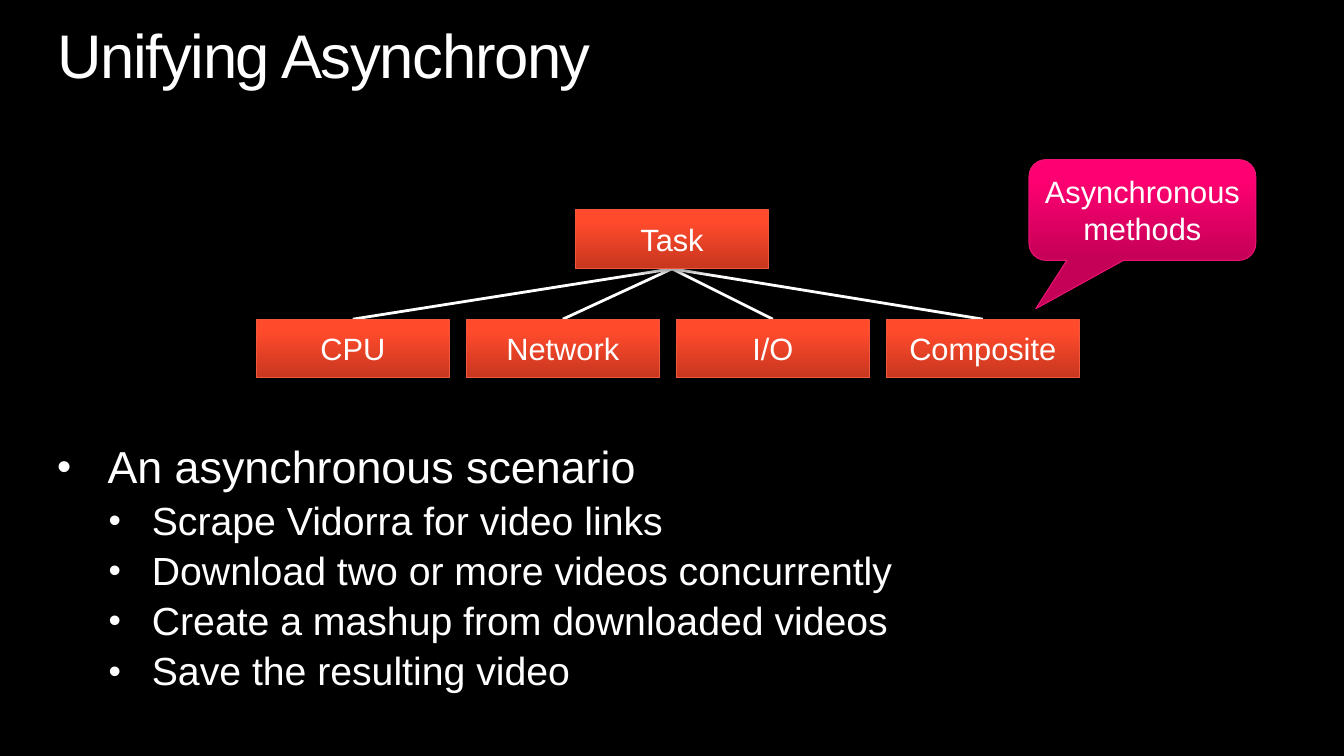
import copy
import lxml.etree
import pptx
import pptx.dml.color
import pptx.enum.shapes
import pptx.enum.text
import pptx.oxml
import pptx.oxml.ns
import pptx.util

SHAPE = pptx.enum.shapes.MSO_SHAPE
ALIGN = pptx.enum.text.PP_ALIGN
ANCHOR = pptx.enum.text.MSO_ANCHOR
qn = pptx.oxml.ns.qn
RED = ("C7371F", "FF4A2C", "FF4B2E"), "F0573E"
PINK = ("C40057", "FE0071", "FF0071"), "ED1374"
SHADE = (
    f'<a:outerShdw {pptx.oxml.ns.nsdecls("a")} blurRad="40000" dist="23000" dir="5400000" rotWithShape="0">'
    '<a:srgbClr val="000000"><a:alpha val="35000"/></a:srgbClr></a:outerShdw>'
)


def color(code):
    return pptx.dml.color.RGBColor.from_string(code)


class Board:
    """Draws on one slide, on a grid of 160 columns by 90 rows, in one style."""

    face = "Arial"
    ink = "FFFFFF"

    def __init__(self, deck):
        self.col = deck.slide_width / 160
        self.row = deck.slide_height / 90
        self.slide = deck.slides.add_slide(deck.slide_layouts[6])
        self.slide.background.fill.solid()
        self.slide.background.fill.fore_color.rgb = color("000000")

    def place(self, x, y, w, h):
        return [round(n) for n in (x * self.col, y * self.row, w * self.col, h * self.row)]

    def style(self, para, size):
        for run in para.runs:
            run.font.name = self.face
            run.font.size = pptx.util.Pt(size)
            run.font.color.rgb = color(self.ink)

    def text(self, x, y, w, h, lines):
        frame = self.slide.shapes.add_textbox(*self.place(x, y, w, h)).text_frame
        frame.word_wrap = True
        frame.margin_left = frame.margin_right = 0
        frame.margin_top = frame.margin_bottom = 0
        frame.text = "\n".join(lines)
        for para in frame.paragraphs:
            para.line_spacing = 0.9
        return frame.paragraphs

    def title(self, x, y, w, h, words):
        para = self.text(x, y, w, h, [words])[0]
        self.style(para, 44)
        para.runs[0].font._element.set("spc", "-100")

    def bullets(self, x, y, w, h, lines):
        for rank, para in enumerate(self.text(x, y, w, h, lines)):
            level = min(rank, 1)
            para.level = level
            left, hang, size = ((0.5, 0.5, 32), (0.94, 0.43, 28))[level]
            props = para._p.get_or_add_pPr()
            props.set("marL", str(pptx.util.Inches(left)))
            props.set("indent", str(-pptx.util.Inches(hang)))
            if rank:
                space = lxml.etree.SubElement(props, qn("a:spcBef"))
                lxml.etree.SubElement(space, qn("a:spcPct")).set("val", "20000")
            lxml.etree.SubElement(props, qn("a:buSzPct")).set("val", "90000")
            lxml.etree.SubElement(props, qn("a:buFont")).set("typeface", self.face)
            lxml.etree.SubElement(props, qn("a:buChar")).set("char", "•")
            self.style(para, size)

    def box(self, x, y, w, h, words, paint=RED, kind=SHAPE.RECTANGLE):
        shape = self.slide.shapes.add_shape(kind, *self.place(x, y, w, h))
        tones, edge = paint
        shape.fill.gradient()
        shape.fill.gradient_angle = 90
        stops = shape.element.spPr.find(".//" + qn("a:gsLst"))
        stops.append(copy.deepcopy(stops[-1]))
        for stop, tone, spot in zip(shape.fill.gradient_stops, tones, (0, 0.8, 1)):
            stop.color.rgb = color(tone)
            stop.position = spot
        shape.line.color.rgb = color(edge)
        shape.line.width = pptx.util.Pt(0.75)
        shape.shadow.inherit = False
        shape.element.spPr.find(qn("a:effectLst")).append(pptx.oxml.parse_xml(SHADE))
        frame = shape.text_frame
        frame.word_wrap = True
        frame.vertical_anchor = ANCHOR.MIDDLE
        frame.text = words
        para = frame.paragraphs[0]
        para.alignment = ALIGN.CENTER
        self.style(para, 22)
        return shape

    def link(self, top, low):
        line = self.slide.shapes.add_connector(pptx.enum.shapes.MSO_CONNECTOR.STRAIGHT, 0, 0, 0, 0)
        line.begin_connect(top, 2)
        line.end_connect(low, 0)
        line.line.color.rgb = color(self.ink)
        line.line.width = pptx.util.Pt(2)
        lxml.etree.SubElement(line._element.spPr, qn("a:effectLst"))
        top.element.addprevious(line._element)


def main():
    deck = pptx.Presentation()
    deck.slide_width = pptx.util.Inches(13.33)
    deck.slide_height = pptx.util.Inches(7.5)
    board = Board(deck)
    board.title(6.8, 3, 146.3, 8, "Unifying Asynchrony")
    board.bullets(6.8, 53, 146.3, 30.7, [
        "An asynchronous scenario",
        "Scrape Vidorra for video links",
        "Download two or more videos concurrently",
        "Create a mashup from downloaded videos",
        "Save the resulting video",
    ])
    task = board.box(68.5, 25, 23, 7, "Task")
    for rank, name in enumerate(("CPU", "Network", "I/O", "Composite")):
        board.link(task, board.box(30.5 + 25 * rank, 38, 23, 7, name))
    note = board.box(122.5, 19, 27, 12, "Asynchronous methods", PINK, SHAPE.ROUNDED_RECTANGULAR_CALLOUT)
    for rank, value in enumerate((-0.47, 0.98, 0.17)):
        note.adjustments[rank] = value
    deck.save("out.pptx")


if __name__ == "__main__":
    main()
